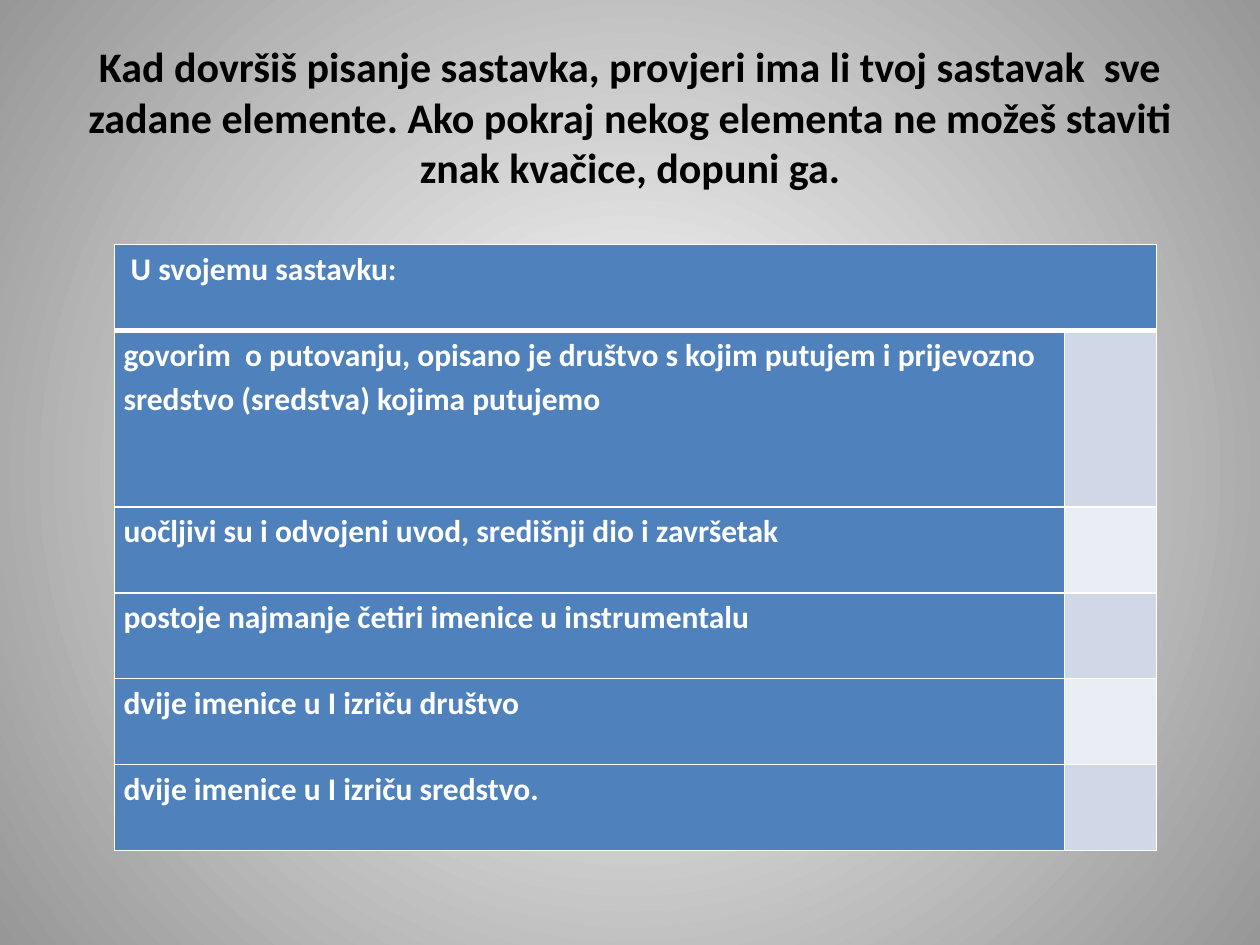
from dataclasses import dataclass

from pptx import Presentation
from pptx.dml.color import RGBColor
from pptx.enum.text import MSO_ANCHOR, PP_ALIGN
from pptx.oxml import parse_xml
from pptx.oxml.ns import nsdecls, qn
from pptx.slide import Slide
from pptx.table import Table, _Cell as Cell
from pptx.text.text import _Paragraph as Paragraph
from pptx.util import Cm, Pt

FONT = "Calibri"
COLORS = {
    "center": "FFFFFF",
    "edge": "979797",
    "title": "000000",
    "label": "FFFFFF",
    "border": "FFFFFF",
    "blue": "4F81BD",
    "band_dark": "D0D8E8",
    "band_light": "E9EDF4",
}


@dataclass
class ChecklistRow:
    label: str
    height: float = 1.73


HEADING = (
    "Kad dovršiš pisanje sastavka, provjeri ima li tvoj sastavak  sve zadane "
    "elemente. Ako pokraj nekog elementa ne možeš staviti znak kvačice, dopuni ga."
)
CHECKLIST = [
    ChecklistRow(" U svojemu sastavku:"),
    ChecklistRow(
        "govorim  o putovanju, opisano je društvo s kojim putujem i prijevozno "
        "sredstvo (sredstva) kojima putujemo",
        3.56,
    ),
    ChecklistRow("uočljivi su i odvojeni uvod, središnji dio i završetak"),
    ChecklistRow("postoje najmanje četiri imenice u instrumentalu"),
    ChecklistRow("dvije imenice u I izriču društvo"),
    ChecklistRow("dvije imenice u I izriču sredstvo."),
]
COLUMN_WIDTHS = (19.15, 1.85)


def color(name: str) -> RGBColor:
    return RGBColor.from_string(COLORS[name])


def add_bold_run(paragraph: Paragraph, text: str, size: int, color_name: str) -> None:
    run = paragraph.add_run()
    run.text = text
    run.font.name = FONT
    run.font.size = Pt(size)
    run.font.bold = True
    run.font.color.rgb = color(color_name)


def paint_background(slide: Slide) -> None:
    fill = slide.background.fill
    fill.gradient()
    for stop, position, name in zip(fill.gradient_stops, (0, 1), ("center", "edge")):
        stop.position = position
        stop.color.rgb = color(name)
    # Turn the linear gradient into a circular one
    gradient = slide.element.find(".//" + qn("a:gradFill"))
    gradient.remove(gradient.find(qn("a:lin")))
    gradient.find(qn("a:gsLst")).addnext(parse_xml(
        f'<a:path {nsdecls("a")} path="circle">'
        '<a:fillToRect l="50000" t="50000" r="50000" b="50000"/></a:path>'
    ))


def set_borders(cell: Cell, top: int = 1, bottom: int = 1) -> None:
    widths = {"lnL": 1, "lnR": 1, "lnT": top, "lnB": bottom}
    properties = cell._tc.get_or_add_tcPr()
    for index, (side, width) in enumerate(widths.items()):
        properties.insert(index, parse_xml(
            f'<a:{side} {nsdecls("a")} w="{Pt(width)}"><a:solidFill>'
            f'<a:srgbClr val="{COLORS["border"]}"/></a:solidFill></a:{side}>'
        ))


def fill_cell(cell: Cell, color_name: str) -> None:
    cell.fill.solid()
    cell.fill.fore_color.rgb = color(color_name)


def fill_row(table: Table, index: int, row: ChecklistRow) -> None:
    table.rows[index].height = Cm(row.height)
    label_cell, tick_cell = table.rows[index].cells
    label_cell.margin_left = label_cell.margin_right = Cm(0.18)
    label_cell.margin_top = label_cell.margin_bottom = 0
    paragraph = label_cell.text_frame.paragraphs[0]
    paragraph.line_spacing = 1.15
    add_bold_run(paragraph, row.label, 18, "label")

    # The header is one blue cell; the tick boxes below it are banded
    fill_cell(label_cell, "blue")
    tick_color = "band_dark" if index % 2 else "band_light"
    fill_cell(tick_cell, "blue" if index == 0 else tick_color)
    for cell in (label_cell, tick_cell):
        set_borders(cell, top=3 if index == 1 else 1, bottom=3 if index == 0 else 1)


def main() -> None:
    presentation = Presentation()
    presentation.slide_width, presentation.slide_height = Cm(25.4), Cm(19.05)
    slide = presentation.slides.add_slide(presentation.slide_layouts[5])
    paint_background(slide)

    # Heading
    heading = slide.shapes.title
    heading.left, heading.top = Cm(1.27), Cm(0.76)
    heading.width, heading.height = Cm(22.86), Cm(3.18)
    heading.text_frame.word_wrap = True
    heading.text_frame.vertical_anchor = MSO_ANCHOR.MIDDLE
    heading_line = heading.text_frame.paragraphs[0]
    heading_line.alignment = PP_ALIGN.CENTER
    add_bold_run(heading_line, HEADING, 24, "title")

    # Checklist
    checklist = slide.shapes.add_table(
        len(CHECKLIST), len(COLUMN_WIDTHS), Cm(2.31), Cm(4.93),
        Cm(sum(COLUMN_WIDTHS)), Cm(sum(row.height for row in CHECKLIST)),
    ).table
    for column, width in zip(checklist.columns, COLUMN_WIDTHS):
        column.width = Cm(width)
    checklist.cell(0, 0).merge(checklist.cell(0, 1))
    for index, row in enumerate(CHECKLIST):
        fill_row(checklist, index, row)

    presentation.save("out.pptx")


if __name__ == "__main__":
    main()
